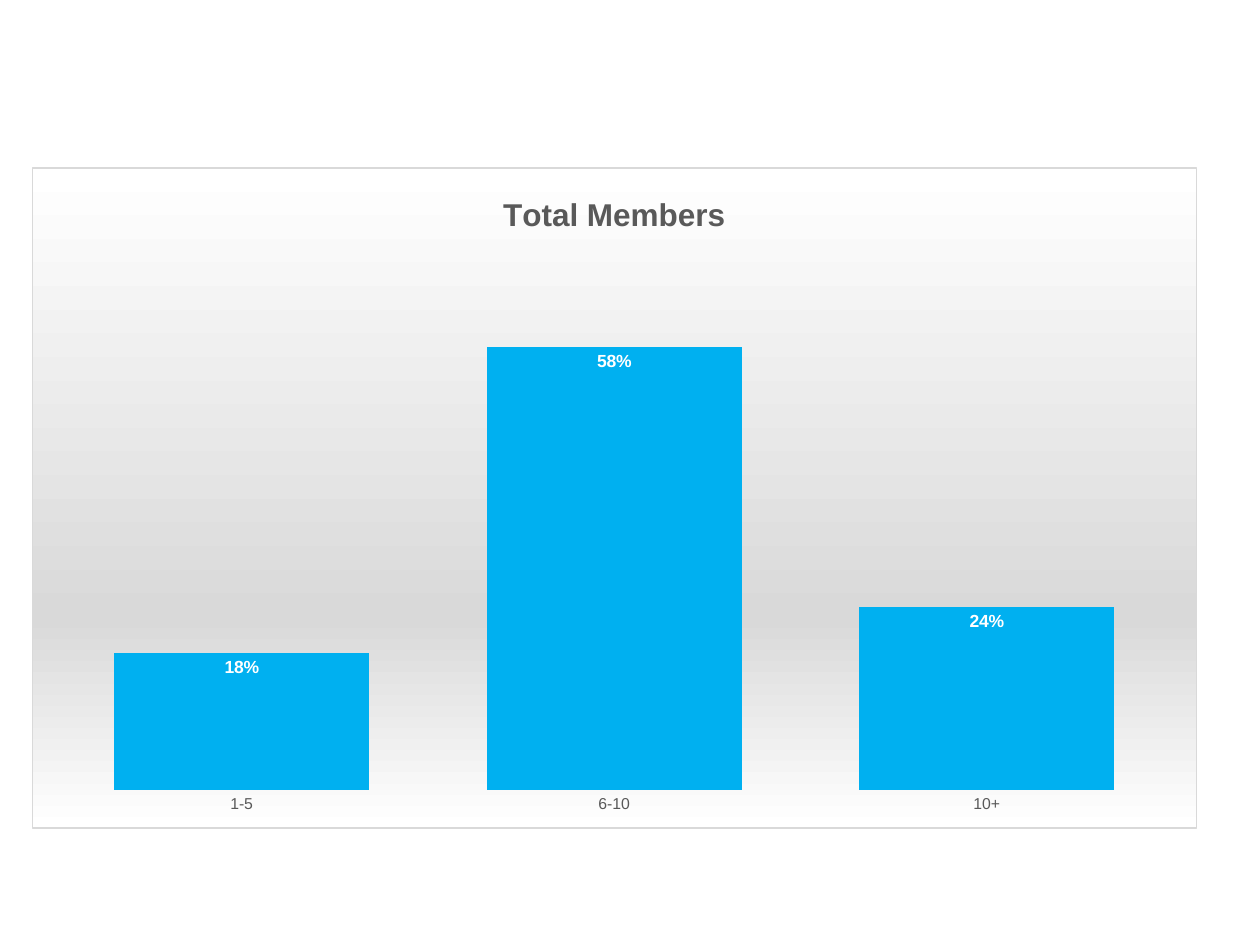
from dataclasses import dataclass

from lxml import etree
from pptx import Presentation
from pptx import util as u
from pptx.chart.data import CategoryChartData
from pptx.dml.color import RGBColor
from pptx.enum import chart as kinds
from pptx.oxml import parse_xml
from pptx.oxml.ns import nsdecls, qn


@dataclass(frozen=True)
class Theme:
    font: str = "Arial"
    bar: str = "00B0F0"
    muted: str = "595959"
    light: str = "FFFFFF"
    shade: str = "D9D9D9"
    title_size: int = 18
    label_size: int = 10
    axis_size: int = 9


@dataclass(frozen=True)
class Area:
    x: float
    y: float
    w: float
    h: float


@dataclass(frozen=True)
class Group:
    name: str
    share: float


THEME = Theme()
CHART_AREA = Area(0.025, 0.177, 0.925, 0.7)
PLOT_AREA = Area(0.02, 0.133, 0.96, 0.81)
GROUPS = [Group("1-5", 0.18), Group("6-10", 0.58), Group("10+", 0.24)]


def apply(target, values: dict) -> None:
    for name, value in values.items():
        setattr(target, name, value)


def format_font(font, size: int, colour: str, bold: bool) -> None:
    apply(font, {"name": THEME.font, "size": u.Pt(size), "bold": bold})
    font.color.rgb = RGBColor.from_string(colour)


def style_background(chart) -> None:
    stops = "".join(
        f'<a:gs pos="{share * 1000}"><a:srgbClr val="{colour}"/></a:gs>'
        for share, colour in ((0, THEME.light), (68, THEME.shade), (100, THEME.light))
    )
    properties = parse_xml(
        f'<c:spPr {nsdecls("c", "a")}><a:gradFill><a:gsLst>{stops}</a:gsLst>'
        f'<a:lin ang="5400000" scaled="0"/></a:gradFill><a:ln w="{u.Pt(0.75)}">'
        f'<a:solidFill><a:srgbClr val="{THEME.shade}"/></a:solidFill></a:ln></c:spPr>'
    )
    chart.element.find(qn("c:chart")).addnext(properties)


def place_plot(chart, area: Area) -> None:
    plot_area = chart.element.find(qn("c:chart")).find(qn("c:plotArea"))
    for old in plot_area.findall(qn("c:layout")):
        plot_area.remove(old)
    layout = etree.Element(qn("c:layout"))
    manual = etree.SubElement(layout, qn("c:manualLayout"))
    settings = {
        "layoutTarget": "inner", "xMode": "edge", "yMode": "edge",
        "x": area.x, "y": area.y, "w": area.w, "h": area.h,
    }
    for name, value in settings.items():
        etree.SubElement(manual, qn(f"c:{name}")).set("val", str(value))
    plot_area.insert(0, layout)


def style_title(chart, words: str) -> None:
    frame = chart.chart_title.text_frame
    frame.text = words
    format_font(frame.paragraphs[0].runs[0].font, THEME.title_size, THEME.muted, True)
    chart.chart_title.include_in_layout = False


def style_axes(chart) -> None:
    axis = chart.category_axis
    apply(axis, {
        "major_tick_mark": kinds.XL_TICK_MARK.NONE,
        "minor_tick_mark": kinds.XL_TICK_MARK.NONE,
        "has_major_gridlines": False,
    })
    axis.format.line.fill.background()
    format_font(axis.tick_labels.font, THEME.axis_size, THEME.muted, False)
    apply(chart.value_axis, {
        "visible": False, "has_major_gridlines": False,
        "minimum_scale": 0, "maximum_scale": 0.7,
    })
    apply(chart.value_axis.tick_labels, {
        "number_format": "0%", "number_format_is_linked": False,
    })


def style_bars(chart) -> None:
    plot = chart.plots[0]
    apply(plot, {"gap_width": 46, "vary_by_categories": False})
    bars = plot.series[0]
    bars.format.fill.solid()
    bars.format.fill.fore_color.rgb = RGBColor.from_string(THEME.bar)
    labels = bars.data_labels
    apply(labels, {
        "show_value": True, "number_format": "0%", "number_format_is_linked": False,
        "position": kinds.XL_LABEL_POSITION.INSIDE_END,
    })
    format_font(labels.font, THEME.label_size, THEME.light, True)


def add_members_chart(deck, page, area: Area, groups: list[Group]) -> None:
    data = CategoryChartData(number_format="0%")
    data.categories = [group.name for group in groups]
    data.add_series("Series 1", [group.share for group in groups])
    width, height = deck.slide_width, deck.slide_height
    chart = page.shapes.add_chart(
        kinds.XL_CHART_TYPE.COLUMN_CLUSTERED,
        int(area.x * width), int(area.y * height),
        int(area.w * width), int(area.h * height), data,
    ).chart
    chart.has_legend = False
    apply(chart.font, {"name": THEME.font, "size": u.Pt(THEME.label_size)})
    style_background(chart)
    place_plot(chart, PLOT_AREA)
    style_title(chart, "Total Members")
    style_axes(chart)
    style_bars(chart)


def main() -> None:
    deck = Presentation()
    apply(deck, {"slide_width": u.Inches(10), "slide_height": u.Inches(7.5)})
    page = deck.slides.add_slide(deck.slide_layouts.get_by_name("Blank"))
    add_members_chart(deck, page, CHART_AREA, GROUPS)
    deck.save("out.pptx")


if __name__ == "__main__":
    main()
